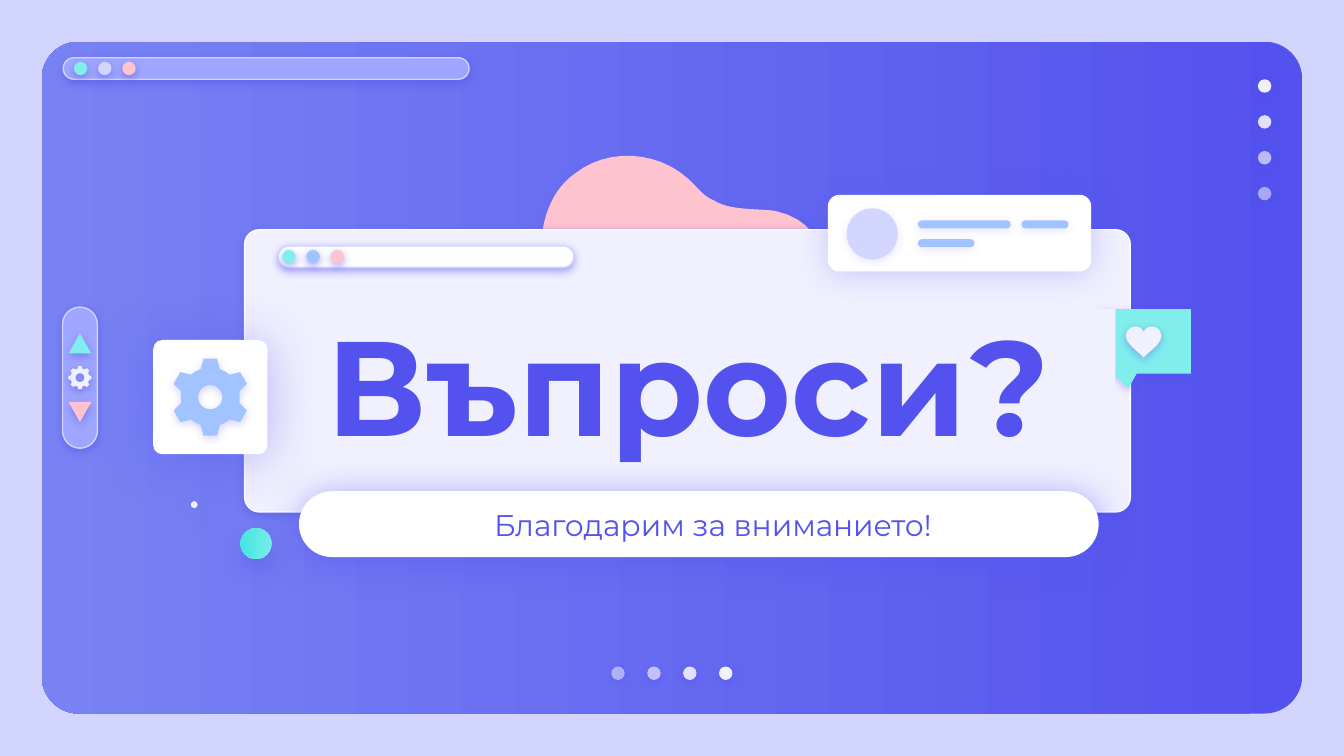
import math

from lxml import etree
from pptx import Presentation
from pptx.dml.color import RGBColor
from pptx.enum import shapes as kinds, text as styles
from pptx.oxml.ns import qn
from pptx.util import Inches, Pt

INDIGO, LILAC, MIST, WHITE = "5352EE", "D2D6FF", "F1F0FF", "FFFFFF"
PERIWINKLE, AQUA, PINK, SKY = "9EA6FF", "81EEEB", "FFC3D0", "A1C3FF"
FORM = kinds.MSO_SHAPE
SOFT = (50, 4.5, 1.5)  # shadow opacity %, blur pt, distance pt


def rgb(value):
    return RGBColor.from_string(value)


def set_alpha(color_element, percent):
    etree.SubElement(color_element, qn("a:alpha"), val=str(percent * 1000))


def add_shadow(shape, opacity, blur, distance):
    effects = shape.element.spPr.find(qn("a:effectLst"))
    outer = etree.SubElement(
        effects, qn("a:outerShdw"), blurRad=str(Pt(blur)), dist=str(Pt(distance)),
        dir="5400000", algn="bl", rotWithShape="0")
    set_alpha(etree.SubElement(outer, qn("a:srgbClr"), val=INDIGO), opacity)


def paint(shape, color, shadow=SOFT, line=None, alpha=None):
    """Colour a shape; a (start, end, angle) tuple makes a gradient."""
    shape.shadow.inherit = False
    if isinstance(color, tuple):
        start, end, angle = color
        shape.fill.gradient()
        shape.fill.gradient_angle = angle
        for stop, value in zip(shape.fill.gradient_stops, (start, end)):
            stop.color.rgb = rgb(value)
    else:
        shape.fill.solid()
        shape.fill.fore_color.rgb = rgb(color)
    if alpha:
        set_alpha(shape.element.spPr.find(qn("a:solidFill"))[0], alpha)
    if line:
        shape.line.color.rgb = rgb(line)
        shape.line.width = Pt(0.75)
    else:
        shape.line.fill.background()
    if shadow:
        add_shadow(shape, *shadow)
    return shape


def add_form(page, form, box, color, adjust=(), rotation=0, **look):
    shape = page.shapes.add_shape(form, *map(Inches, box))
    for index, value in enumerate(adjust):
        shape.adjustments[index] = value
    shape.rotation = rotation
    return paint(shape, color, **look)


def add_outline(page, contours, color, **look):
    builder = None
    for contour in contours:
        start, *rest = [(Inches(x), Inches(y)) for x, y in contour]
        if builder is None:
            builder = page.shapes.build_freeform(*start)
        else:
            builder.move_to(*start)
        builder.add_line_segments(rest, close=True)
    return paint(builder.convert_to_shape(), color, **look)


def trace_curve(start, segments, steps=12):
    """Points along a chain of cubic curves (two controls and an end each)."""
    points = [start]
    for segment in segments:
        knots = [points[-1], *zip(segment[::2], segment[1::2])]
        for step in range(1, steps + 1):
            t = step / steps
            weights = ((1 - t) ** 3, 3 * t * (1 - t) ** 2, 3 * t * t * (1 - t), t ** 3)
            points.append(tuple(sum(w * knot[axis] for w, knot in zip(weights, knots))
                                for axis in (0, 1)))
    return points


def add_gear(page, center, teeth, tip, root, hole, root_angle, color, shadow):
    def polar(radius, degrees):
        angle = math.radians(degrees)
        return center[0] + radius * math.sin(angle), center[1] - radius * math.cos(angle)

    pitch = 360 / teeth
    profile = ((root, -root_angle), (tip, -10), (tip, 10), (root, root_angle), (root, pitch / 2))
    rim = [polar(radius, tooth * pitch + degrees)
           for tooth in range(teeth) for radius, degrees in profile]
    bore = [polar(hole, -degrees) for degrees in range(0, 360, 10)]
    add_outline(page, [rim, bore], color, shadow=shadow)


def add_text(page, box, fill, words, size, bold):
    frame_box = page.shapes.add_textbox(*map(Inches, box))
    paint(frame_box, fill, shadow=None)
    frame = frame_box.text_frame
    frame.word_wrap = True
    frame.vertical_anchor = styles.MSO_ANCHOR.MIDDLE
    frame.margin_left = frame.margin_right = Inches(0.1)
    frame.margin_top = frame.margin_bottom = Inches(0.1)
    para = frame.paragraphs[0]
    para.text = words
    para.alignment = styles.PP_ALIGN.CENTER
    para.font.name, para.font.size, para.font.bold = "Montserrat", Pt(size), bold
    para.font.color.rgb = rgb(INDIGO)


def add_page_dots(page, left, top, step_x, step_y):
    for index, alpha in enumerate((None, 90, 67, 54)):
        add_form(page, FORM.OVAL, (left + index * step_x, top + index * step_y, 0.1, 0.1),
                 MIST, alpha=alpha)


def add_window_bar(page, box, fill, dot_inset, dot_colors):
    left, top, _, _ = box
    add_form(page, FORM.ROUNDED_RECTANGLE, box, fill, adjust=[0.5], line=LILAC)
    for index, color in enumerate(dot_colors):
        add_form(page, FORM.OVAL, (left + dot_inset + index * 0.18, top + 0.03, 0.1, 0.1), color)


def add_blob(page, left, top):
    # Offsets from the left top corner of the blob
    segments = [
        (0.03, 0.5, 0.11, 0.3, 0.27, 0.19), (0.51, 0, 0.88, 0.02, 1.11, 0.23),
        (1.18, 0.29, 1.22, 0.36, 1.3, 0.39), (1.42, 0.47, 1.63, 0.45, 1.76, 0.47),
        (2.17, 0.56, 2.07, 0.92, 2.32, 0.99), (2.43, 1.02, 2.51, 1.02, 2.62, 1.03),
        (2.67, 1.04, 2.75, 1.07, 2.77, 1.15), (2.79, 1.18, 2.8, 1.24, 2.78, 1.27),
        (2.64, 1.49, 2.4, 1.23, 2.26, 1.18), (2.13, 1.16, 1.99, 1.25, 1.87, 1.3),
        (1.75, 1.33, 1.62, 1.33, 1.52, 1.23), (1.45, 1.16, 1.39, 1.1, 1.3, 1.07),
        (1.18, 1.02, 1.06, 1.02, 0.93, 1.05), (0.84, 1.09, 0.72, 1.15, 0.6, 1.18),
        (0.53, 1.19, 0.4, 1.22, 0.31, 1.16), (0.2, 1.1, 0.12, 1.02, 0.06, 0.96),
        (0.01, 0.89, 0, 0.78, 0.02, 0.69)]
    outline = [(left + x, top + y) for x, y in trace_curve((0.02, 0.69), segments)]
    add_outline(page, [outline], PINK, shadow=(22, 4.5, 1.5))


def add_like_bubble(page, left, top):
    add_form(page, FORM.ROUNDED_RECTANGULAR_CALLOUT, (left, top, 0.69, 0.48), AQUA,
             adjust=[-0.174, 0.731, 0], shadow=(31, 4.5, 1.5))
    # Heart: half an outline, mirrored
    half = trace_curve((0, 0.04), [
        (0.01, 0.02, 0.03, 0, 0.06, 0), (0.1, 0, 0.13, 0.03, 0.13, 0.07),
        (0.13, 0.13, 0.06, 0.17, 0, 0.23)])
    center, heart_top = left + 0.34, top + 0.13
    heart = [(center + x, heart_top + y) for x, y in half]
    heart += [(center - x, heart_top + y) for x, y in half[-2:0:-1]]
    add_outline(page, [heart], MIST, shadow=(38, 4.5, 1.5))


def add_profile_card(page, left, top):
    add_form(page, FORM.ROUNDED_RECTANGLE, (left, top, 1.96, 0.57), WHITE,
             adjust=[0.15], shadow=(25, 16.9, 1.5))
    faint = (13, 4.5, 1.5)
    add_form(page, FORM.OVAL, (left + 0.14, top + 0.1, 0.38, 0.38), LILAC, shadow=faint)
    for x, y, width in ((0.67, 0.19, 0.69), (1.44, 0.19, 0.35), (0.67, 0.33, 0.42)):
        add_form(page, FORM.ROUNDED_RECTANGLE, (left + x, top + y, width, 0.06), SKY,
                 adjust=[0.5], shadow=faint)


def add_gear_tile(page, left, top, side):
    add_form(page, FORM.ROUNDED_RECTANGLE, (left, top, side, side), WHITE,
             adjust=[0.08], shadow=(38, 29.2, 1.5))
    add_gear(page, (left + side / 2, top + side / 2), 6, 0.29, 0.22, 0.09, 19,
             SKY, (23, 4.5, 1.5))


def add_side_control(page, center_x, center_y):
    add_form(page, FORM.ROUNDED_RECTANGLE, (center_x - 0.525, center_y - 0.13, 1.05, 0.26),
             PERIWINKLE, adjust=[0.5], rotation=90, line=LILAC)
    for offset, rotation, color in ((-0.33, 0, AQUA), (0.18, 180, PINK)):
        add_form(page, FORM.ISOSCELES_TRIANGLE,
                 (center_x - 0.085, center_y + offset, 0.17, 0.15), color, rotation=rotation)
    add_gear(page, (center_x, center_y), 8, 0.087, 0.07, 0.033, 13, MIST, (52, 4.5, 1.5))


def main():
    deck = Presentation()
    deck.slide_width, deck.slide_height = Inches(10), Inches(5.625)
    page = deck.slides.add_slide(deck.slide_layouts[6])
    page.background.fill.solid()
    page.background.fill.fore_color.rgb = rgb(LILAC)

    # Backdrop with its window bar and page dots
    add_form(page, FORM.ROUNDED_RECTANGLE, (0.31, 0.31, 9.38, 5), (INDIGO, "7882F3", 180),
             adjust=[0.056], shadow=None)
    add_page_dots(page, 9.36, 0.59, 0, 0.267)
    add_window_bar(page, (0.47, 0.43, 3.02, 0.16), PERIWINKLE, 0.08, (AQUA, LILAC, PINK))
    add_page_dots(page, 5.35, 4.96, -0.267, 0)

    # Main window
    add_blob(page, 4.01, 1.1)
    add_form(page, FORM.ROUNDED_RECTANGLE, (1.82, 1.71, 6.59, 2.1), MIST,
             adjust=[0.052], line=WHITE)
    add_window_bar(page, (2.07, 1.83, 2.2, 0.16), WHITE, 0.03, (AQUA, SKY, PINK))
    add_form(page, FORM.ROUNDED_RECTANGLE, (2.23, 3.66, 5.94, 0.48), WHITE,
             adjust=[0.5], line=WHITE, shadow=(50, 19.1, 1.5))
    add_like_bubble(page, 8.17, 2.3)
    add_text(page, (1.94, 2.3, 6.36, 1.09), MIST, "Въпроси?", 72, True)
    add_text(page, (2.6, 3.79, 5.41, 0.22), WHITE, "Благодарим за вниманието!", 16, False)

    # Decorations around the window
    add_profile_card(page, 6.16, 1.45)
    add_gear_tile(page, 1.14, 2.53, 0.85)
    ball_shadow = (38, 12.4, 6.8)
    add_form(page, FORM.OVAL, (1.79, 3.93, 0.23, 0.23), (AQUA, "3AE4DF", 225),
             rotation=45, shadow=ball_shadow)
    add_form(page, FORM.OVAL, (1.42, 3.73, 0.05, 0.05), MIST, shadow=ball_shadow)
    add_side_control(page, 0.595, 2.81)

    deck.save("out.pptx")


if __name__ == "__main__":
    main()
